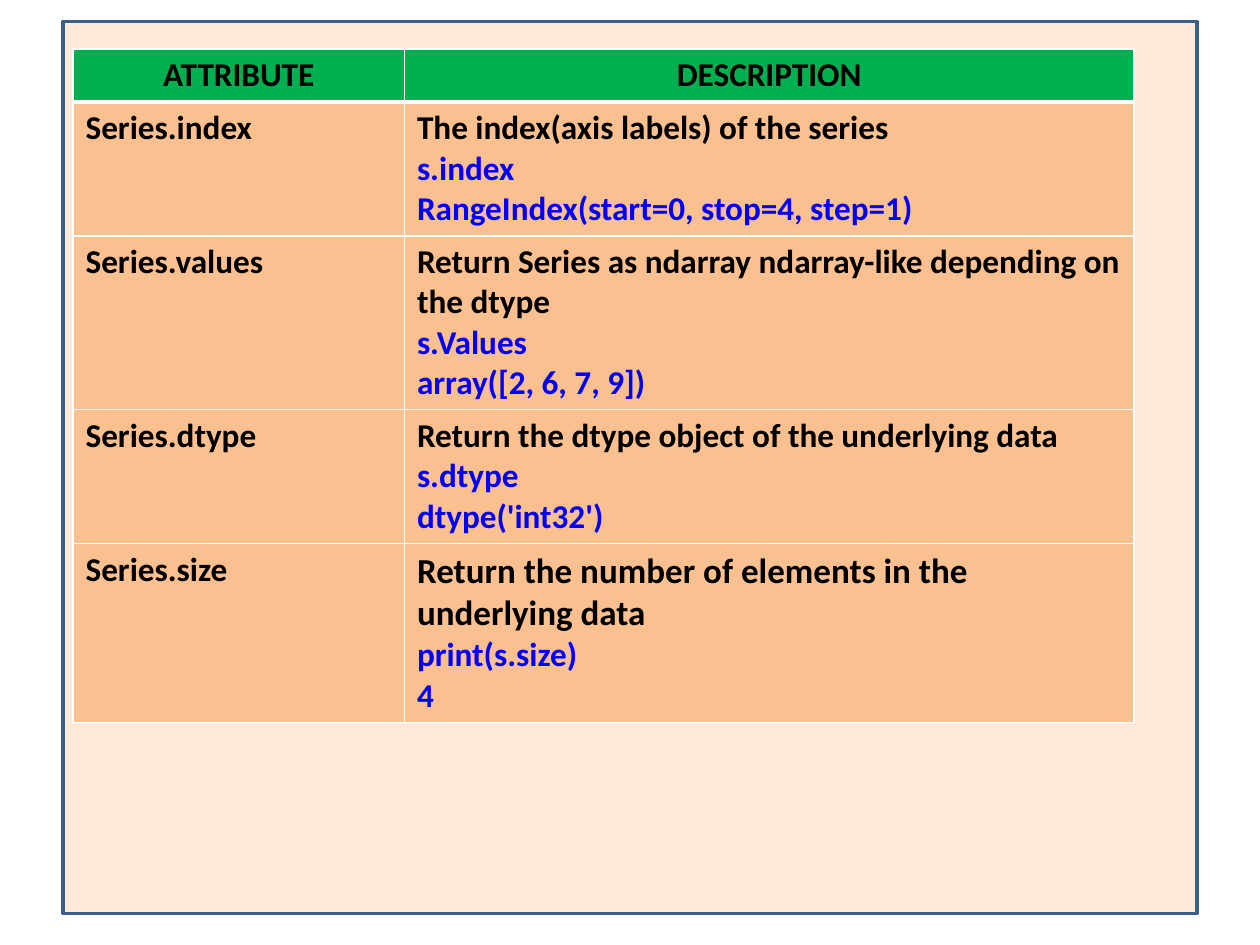
import pptx
import pptx.dml.color
import pptx.enum.shapes
import pptx.enum.text
import pptx.oxml
import pptx.oxml.ns
import pptx.util

COLORS = {
    "panel": "FDEADA", "outline": "3A5F8C", "header": "00B050",
    "body": "FAC090", "border": "FFFFFF", "text": "000000", "code": "0000FF",
}
FONT = {"name": "Calibri", "bold": True}
TEXT_SIZE, LARGE_SIZE = 19, 20
COLUMN_WIDTHS = [2.63, 5.79]
ROW_HEIGHTS = [0.39, 0.98, 1.27, 0.98, 1.3]
HEADER = ["ATTRIBUTE", "DESCRIPTION"]
# Attribute, description, description size, code lines
ATTRIBUTES = [
    ("Series.index", "The index(axis labels) of the series", TEXT_SIZE,
     ["s.index", "RangeIndex(start=0, stop=4, step=1)"]),
    ("Series.values", "Return Series as ndarray ndarray-like depending on the dtype",
     TEXT_SIZE, ["s.Values", "array([2, 6, 7, 9])"]),
    ("Series.dtype", "Return the dtype object of the underlying data", TEXT_SIZE,
     ["s.dtype", "dtype('int32')"]),
    ("Series.size", "Return the number of elements in the underlying data", LARGE_SIZE,
     ["print(s.size)", "4"]),
]
inches = pptx.util.Inches
rgb = pptx.dml.color.RGBColor.from_string


def fill_cell(cell, lines, fill, alignment, bottom_width):
    """Write (text, size, color) lines, then set the cell's borders and fill."""
    for index, (text, size, color) in enumerate(lines):
        frame = cell.text_frame
        paragraph = frame.paragraphs[0] if index == 0 else frame.add_paragraph()
        paragraph.alignment = alignment
        run = paragraph.add_run()
        run.text = text
        run.font.color.rgb = rgb(COLORS[color])
        for name, value in {**FONT, "size": pptx.util.Pt(size)}.items():
            setattr(run.font, name, value)
    properties = cell._tc.get_or_add_tcPr()
    for side, width in {"L": 1, "R": 1, "T": 1, "B": bottom_width}.items():
        properties.append(pptx.oxml.parse_xml(
            f'<a:ln{side} {pptx.oxml.ns.nsdecls("a")} w="{pptx.util.Pt(width)}">'
            f'<a:solidFill><a:srgbClr val="{COLORS["border"]}"/></a:solidFill>'
            f'</a:ln{side}>'))
    cell.fill.solid()
    cell.fill.fore_color.rgb = rgb(COLORS[fill])


presentation = pptx.Presentation()
presentation.slide_width = inches(10)
presentation.slide_height = inches(7.5)
slide = presentation.slides.add_slide(presentation.slide_layouts[6])

panel = slide.shapes.add_shape(
    pptx.enum.shapes.MSO_SHAPE.RECTANGLE,
    inches(0.5), inches(0.17), inches(9), inches(7.08))
panel.shadow.inherit = False
panel.fill.solid()
panel.fill.fore_color.rgb = rgb(COLORS["panel"])
panel.line.color.rgb = rgb(COLORS["outline"])
panel.line.width = pptx.util.Pt(2)

table_frame = slide.shapes.add_table(
    len(ROW_HEIGHTS), len(COLUMN_WIDTHS),
    inches(0.58), inches(0.39), inches(sum(COLUMN_WIDTHS)), inches(5.28))
table = table_frame.table
for column, width in zip(table.columns, COLUMN_WIDTHS):
    column.width = inches(width)
for row, height in zip(table.rows, ROW_HEIGHTS):
    row.height = inches(height)
table_frame.height = inches(5.28)

align = pptx.enum.text.PP_ALIGN
for column, title in enumerate(HEADER):
    fill_cell(table.cell(0, column), [(title, TEXT_SIZE, "text")],
              "header", align.CENTER, 3)
for row, (attribute, description, size, code) in enumerate(ATTRIBUTES, start=1):
    details = [(description, size, "text")] + [(line, TEXT_SIZE, "code") for line in code]
    for column, lines in enumerate([[(attribute, TEXT_SIZE, "text")], details]):
        fill_cell(table.cell(row, column), lines, "body", align.LEFT, 1)

presentation.save("out.pptx")
